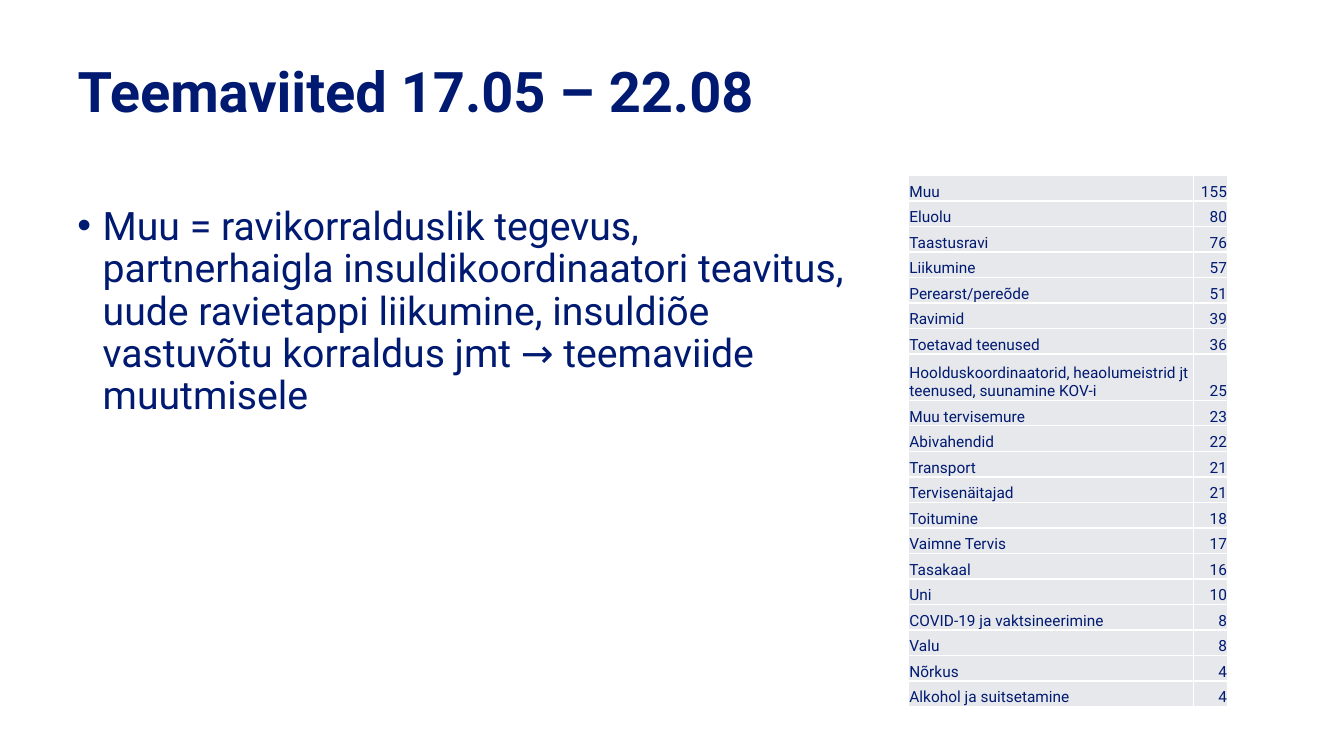
import pptx
import pptx.util
import pptx.dml.color
import pptx.enum.text
import pptx.oxml.ns
from lxml import etree

Inches = pptx.util.Inches
Pt = pptx.util.Pt
Align = pptx.enum.text.PP_ALIGN
Anchor = pptx.enum.text.MSO_ANCHOR
qn = pptx.oxml.ns.qn

TOPICS = [
    ("Muu", 155),
    ("Eluolu", 80),
    ("Taastusravi", 76),
    ("Liikumine", 57),
    ("Perearst/pereõde", 51),
    ("Ravimid", 39),
    ("Toetavad teenused", 36),
    ("Hoolduskoordinaatorid, heaolumeistrid jt teenused, suunamine KOV-i", 25),
    ("Muu tervisemure", 23),
    ("Abivahendid", 22),
    ("Transport", 21),
    ("Tervisenäitajad", 21),
    ("Toitumine", 18),
    ("Vaimne Tervis", 17),
    ("Tasakaal", 16),
    ("Uni", 10),
    ("COVID-19 ja vaktsineerimine", 8),
    ("Valu", 8),
    ("Nõrkus", 4),
    ("Alkohol ja suitsetamine", 4),
]
TALL = 7  # the one row with two lines


def color(code):
    return pptx.dml.color.RGBColor.from_string(code)


class Deck:
    face = "Roboto"
    ink = "001A71"
    tint = "E7E8EB"
    rule = "FFFFFF"

    def __init__(self, slide):
        self.slide = slide

    def style(self, para, size, bold=False):
        font = para.font
        font.name = self.face
        font.size = Pt(size)
        font.bold = bold
        font.color.rgb = color(self.ink)

    def title(self, text, left, top, width, height):
        shape = self.slide.shapes.title
        shape.left, shape.top = Inches(left), Inches(top)
        shape.width, shape.height = Inches(width), Inches(height)
        frame = shape.text_frame
        frame.text = text
        frame.vertical_anchor = Anchor.TOP
        para = frame.paragraphs[0]
        para.alignment = Align.LEFT
        para.line_spacing = 0.9
        self.style(para, 40, True)

    def bullet(self, text, left, top, width, height):
        box = self.slide.shapes.add_textbox(
            Inches(left), Inches(top), Inches(width), Inches(height))
        frame = box.text_frame
        frame.word_wrap = True
        para = frame.paragraphs[0]
        para.text = text
        para.line_spacing = 0.9
        props = para._p.get_or_add_pPr()
        props.set("marL", str(Inches(0.25)))
        props.set("indent", str(-Inches(0.25)))
        etree.SubElement(props, qn("a:buFont"), typeface="Arial")
        etree.SubElement(props, qn("a:buChar"), char="•")
        self.style(para, 28)

    def border(self, cell):
        props = cell._tc.get_or_add_tcPr()
        for side in ("a:lnL", "a:lnR", "a:lnT", "a:lnB"):
            line = etree.SubElement(props, qn(side), w=str(Pt(1)))
            fill = etree.SubElement(line, qn("a:solidFill"))
            etree.SubElement(fill, qn("a:srgbClr"), val=self.rule)

    def cell(self, cell, text, align):
        cell.text = text
        cell.vertical_anchor = Anchor.BOTTOM
        cell.margin_left = cell.margin_right = cell.margin_top = Inches(0.01)
        cell.margin_bottom = 0
        para = cell.text_frame.paragraphs[0]
        para.alignment = align
        self.style(para, 11)
        self.border(cell)
        cell.fill.solid()
        cell.fill.fore_color.rgb = color(self.tint)

    def table(self, data, left, top, widths, height, tall):
        grid = self.slide.shapes.add_table(
            len(data), len(widths), Inches(left), Inches(top),
            Inches(sum(widths)), Inches(height)).table
        grid.first_row = grid.horz_banding = False
        for col, width in zip(grid.columns, widths):
            col.width = Inches(width)
        low = (height - tall) / (len(data) - 1)
        for i, (name, count) in enumerate(data):
            grid.rows[i].height = Inches(tall if i == TALL else low)
            self.cell(grid.cell(i, 0), name, Align.LEFT)
            self.cell(grid.cell(i, 1), str(count), Align.RIGHT)


def main():
    show = pptx.Presentation()
    show.slide_width, show.slide_height = Inches(13.33), Inches(7.5)
    deck = Deck(show.slides.add_slide(show.slide_layouts[5]))

    # Heading
    deck.title("Teemaviited 17.05 – 22.08", 0.67, 0.59, 11.5, 1.45)

    # Topic counts
    deck.table(TOPICS, 9.01, 1.74, (2.83, 0.34), 5.27, 0.46)

    # Note on the largest topic
    deck.bullet(
        "Muu = ravikorralduslik tegevus, partnerhaigla insuldikoordinaatori "
        "teavitus, uude ravietappi liikumine, insuldiõe vastuvõtu korraldus "
        "jmt → teemaviide muutmisele", 0.67, 2, 8.12, 4.76)

    show.save("out.pptx")


if __name__ == "__main__":
    main()
